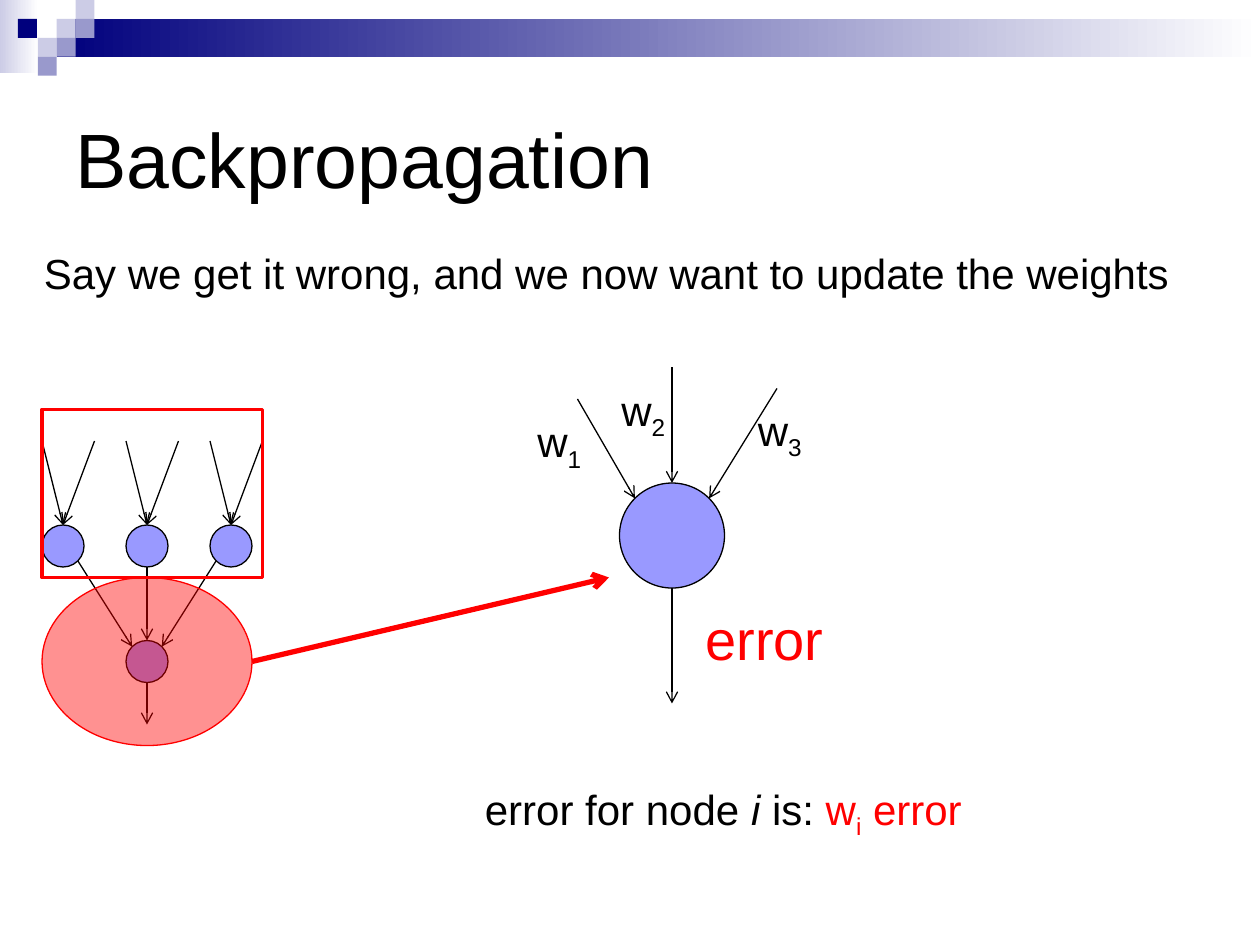
from dataclasses import dataclass
from math import sqrt

from lxml import etree
from pptx import Presentation
from pptx.dml.color import RGBColor
from pptx.enum.shapes import MSO_CONNECTOR, MSO_SHAPE
from pptx.enum.text import MSO_ANCHOR, MSO_AUTO_SIZE
from pptx.oxml.ns import qn
from pptx.util import Pt

RECTANGLE = MSO_SHAPE.RECTANGLE
OVAL = MSO_SHAPE.OVAL
STRAIGHT = MSO_CONNECTOR.STRAIGHT
MIDDLE = MSO_ANCHOR.MIDDLE
GROW = MSO_AUTO_SIZE.SHAPE_TO_FIT_TEXT


@dataclass(frozen=True)
class Theme:
    font: str = "Arial"
    ink: str = "000000"
    accent: str = "FF0000"
    node: str = "9999FF"
    navy: str = "00007D"
    lilac: str = "9999CC"
    pale: str = "CCCCE6"
    white: str = "FFFFFF"
    title: float = 44
    error: float = 32
    body: float = 24
    thin: float = 0.75
    frame: float = 2.25
    thick: float = 3


class SlideBuilder:
    def __init__(self, slide, theme):
        self.slide = slide
        self.theme = theme

    def shape(self, kind, left, top, width, height, fill=None, line=None, weight=None, alpha=None):
        item = self.slide.shapes.add_shape(kind, Pt(left), Pt(top), Pt(width), Pt(height))
        item.shadow.inherit = False
        if fill:
            item.fill.solid()
            item.fill.fore_color.rgb = RGBColor.from_string(fill)
        else:
            item.fill.background()
        if line:
            item.line.color.rgb = RGBColor.from_string(line)
            item.line.width = Pt(weight or self.theme.thin)
        else:
            item.line.fill.background()
        if alpha:
            color = item.fill._xPr.find(qn("a:solidFill"))[0]
            etree.SubElement(color, qn("a:alpha"), val=str(alpha * 1000))
        return item

    def gradient(self, left, top, width, height, start, end):
        fill = self.shape(RECTANGLE, left, top, width, height).fill
        fill.gradient()
        fill.gradient_angle = 0
        for stop, color in zip(fill.gradient_stops, (start, end)):
            stop.color.rgb = RGBColor.from_string(color)

    def node(self, center, radius):
        x, y = center
        self.shape(OVAL, x - radius, y - radius, 2 * radius, 2 * radius,
                   self.theme.node, self.theme.ink)

    def arrow(self, start, end, color=None, weight=None):
        item = self.slide.shapes.add_connector(STRAIGHT, *(Pt(v) for v in (*start, *end)))
        item.line.color.rgb = RGBColor.from_string(color or self.theme.ink)
        item.line.width = Pt(weight or self.theme.thin)
        etree.SubElement(item.line._get_or_add_ln(), qn("a:tailEnd"), type="arrow")
        etree.SubElement(item._element.spPr, qn("a:effectLst"))

    def text(self, left, top, width, height, parts, size=None, anchor=None):
        box = self.slide.shapes.add_textbox(Pt(left), Pt(top), Pt(width), Pt(height))
        frame = box.text_frame
        frame.word_wrap = True
        if anchor is None:
            frame.auto_size = GROW
        else:
            frame.vertical_anchor = anchor
        for content, color, style in parts:
            run = frame.paragraphs[0].add_run()
            run.text = content
            run.font.name = self.theme.font
            run.font.size = Pt(size or self.theme.body)
            run.font.color.rgb = RGBColor.from_string(color)
            if style == "italic":
                run.font.italic = True
            elif style == "subscript":
                run._r.get_or_add_rPr().set("baseline", "-25000")


def draw_header(builder):
    theme = builder.theme
    cell = 10.8
    builder.gradient(0, 0, 22, 42, theme.pale, theme.white)
    builder.gradient(3 * cell, cell, 720 - 3 * cell, 2 * cell, theme.navy, theme.white)
    tiles = [(3, 1, theme.pale), (4, 0, theme.pale), (4, 1, theme.lilac),
             (2, 2, theme.pale), (0.95, 1, theme.navy), (3, 2, theme.lilac),
             (2, 3, theme.lilac)]
    for column, row, color in tiles:
        builder.shape(RECTANGLE, column * cell, row * cell, cell, cell, color)


def draw_network(builder):
    theme = builder.theme
    radius = 12
    diagonal = radius / sqrt(2)
    hidden_nodes = [(36 + 48 * i, 312) for i in range(3)]
    output = (84, 378)
    for center in (*hidden_nodes, output):
        builder.node(center, radius)
    for (x, y), side in zip(hidden_nodes, (1, 0, -1)):
        reach = diagonal if side else radius
        builder.arrow((x + side * reach, y + reach),
                      (output[0] - side * reach, output[1] - reach))
        for offset in (-12, 18):
            builder.arrow((x + offset, 252), (x, y - radius))
    builder.arrow((output[0], output[1] + radius), (output[0], 414))
    builder.shape(RECTANGLE, 24, 234, 126, 96, line=theme.accent, weight=theme.frame)


def draw_output_detail(builder):
    theme = builder.theme
    x, y = 384, 306
    radius = 30
    diagonal = radius / sqrt(2)
    builder.shape(OVAL, 24, 330, 120, 96, theme.accent, theme.accent, alpha=43)
    builder.node((x, y), radius)
    builder.arrow((x, y + radius), (x, 402))
    builder.arrow((144, 378), (348, 330), theme.accent, theme.thick)
    builder.text(396, 342, 102, 46, [("error", theme.accent, None)], theme.error)
    weights = [((330, 228), (x - diagonal, y - diagonal), (300, 234)),
               ((384, 210), (x, y - radius), (348, 216)),
               ((444, 222), (x + diagonal, y - diagonal), (426, 227.5))]
    for number, (start, end, label) in enumerate(weights, 1):
        builder.arrow(start, end)
        builder.text(*label, 48, 36, [("w", theme.ink, None),
                                      (str(number), theme.ink, "subscript")])


def main():
    presentation = Presentation()
    presentation.slide_width, presentation.slide_height = Pt(720), Pt(540)
    theme = Theme()
    slide = presentation.slides.add_slide(presentation.slide_layouts[6])
    builder = SlideBuilder(slide, theme)
    draw_header(builder)
    builder.text(36, 36, 648, 108, [("Backpropagation", theme.ink, None)], theme.title, MIDDLE)
    draw_network(builder)
    builder.text(18, 138, 720, 36, [
        ("Say we get it wrong, and we now want to update the weights", theme.ink, None)])
    draw_output_detail(builder)
    builder.text(270, 444, 342, 36, [
        ("error for node ", theme.ink, None), ("i", theme.ink, "italic"),
        (" is: ", theme.ink, None), ("w", theme.accent, None),
        ("i", theme.accent, "subscript"), (" error", theme.accent, None)])
    presentation.save("out.pptx")


if __name__ == "__main__":
    main()
